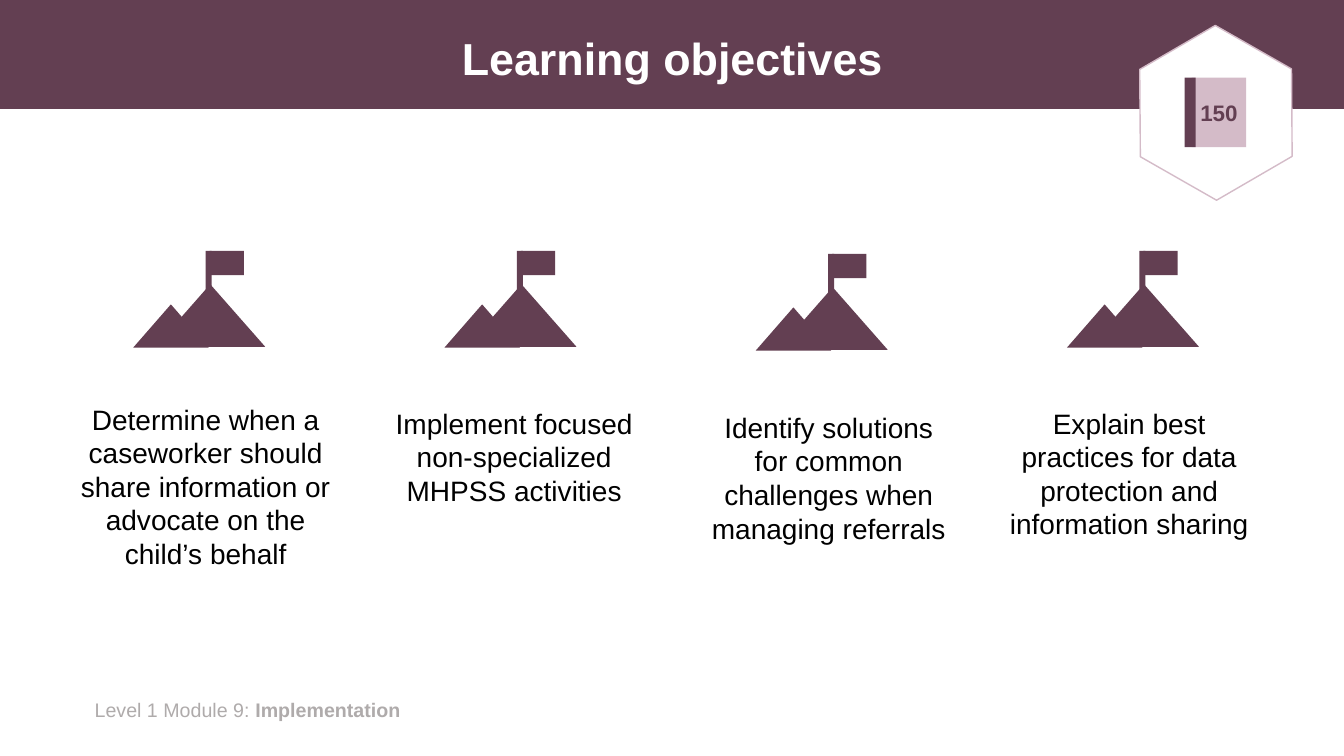
from pptx import Presentation
from pptx.dml.color import RGBColor
from pptx.enum.shapes import MSO_SHAPE
from pptx.enum.text import MSO_ANCHOR, MSO_AUTO_SIZE, PP_ALIGN
from pptx.util import Inches, Pt

PLUM = RGBColor(0x63, 0x3F, 0x52)
PINK = RGBColor(0xD4, 0xBB, 0xC8)
WHITE = RGBColor(0xFF, 0xFF, 0xFF)
BLACK = RGBColor(0, 0, 0)
GREY = RGBColor(0xAF, 0xAB, 0xAB)

# Text, then its left, top, width and height
GOALS = [
    ("Determine when a caseworker should share information or advocate "
     "on the child’s behalf", (0.58, 3.94, 2.92, 1.78)),
    ("Implement focused non-specialized MHPSS activities",
     (3.81, 3.98, 2.58, 1.11)),
    ("Identify solutions for common challenges when managing referrals",
     (6.93, 4.02, 2.58, 1.45)),
    ("Explain best practices for data protection and information sharing",
     (9.91, 3.98, 2.58, 1.45)),
]
# Icon tops and the even step between icons
TOPS = [2.49, 2.49, 2.52, 2.49]
LEFT, STEP = 1.32, 3.087

# Icon parts, measured from the icon's top left corner
PARTS = [
    (MSO_SHAPE.RECTANGLE, 0.72, 0, 0.06, 0.4),
    (MSO_SHAPE.RECTANGLE, 0.76, 0, 0.34, 0.24),
    (MSO_SHAPE.ISOSCELES_TRIANGLE, 0.22, 0.33, 1.09, 0.62),
    (MSO_SHAPE.ISOSCELES_TRIANGLE, 0, 0.53, 0.75, 0.43),
]


def add_run(para, text, size, color, bold=False):
    run = para.add_run()
    run.text = text
    font = run.font
    font.name, font.size, font.bold = "Arial", Pt(size), bold
    font.color.rgb = color


def add_form(shapes, kind, box, fill, line=None):
    form = shapes.add_shape(kind, *map(Inches, box))
    form.shadow.inherit = False
    form.fill.solid()
    form.fill.fore_color.rgb = fill
    if line is None:
        form.line.fill.background()
    else:
        form.line.color.rgb = line
        form.line.width = Pt(1)
    return form


def add_text(slide, box, runs, size, color, align):
    frame = slide.shapes.add_textbox(*map(Inches, box)).text_frame
    frame.word_wrap = True
    frame.auto_size = MSO_AUTO_SIZE.SHAPE_TO_FIT_TEXT
    para = frame.paragraphs[0]
    para.alignment = align
    for text, bold in runs:
        add_run(para, text, size, color, bold)


def add_title(slide, text):
    title = slide.shapes.title
    title.left, title.top = Inches(0.92), Inches(0.13)
    title.width, title.height = Inches(11.5), Inches(0.95)
    frame = title.text_frame
    frame.word_wrap = True
    frame.auto_size = MSO_AUTO_SIZE.NONE
    frame.vertical_anchor = MSO_ANCHOR.MIDDLE
    para = frame.paragraphs[0]
    para.alignment = PP_ALIGN.CENTER
    para.line_spacing = 0.9
    add_run(para, text, 32, WHITE, True)
    # The band lies behind the title
    band = add_form(slide.shapes, MSO_SHAPE.RECTANGLE,
                    (0, 0, 13.33, 1.08), PLUM)
    title.element.addprevious(band.element)


def add_peak(slide, left, top):
    group = slide.shapes.add_group_shape()
    for kind, x, y, wide, high in PARTS:
        add_form(group.shapes, kind, (left + x, top + y, wide, high), PLUM)


def add_badge(slide, text):
    shapes = slide.shapes.add_group_shape().shapes
    hexa = add_form(shapes, MSO_SHAPE.HEXAGON,
                    (11.19, 0.37, 1.74, 1.5), WHITE, PINK)
    hexa.adjustments[0] = 0.29
    hexa.rotation = 29.7
    page = add_form(shapes, MSO_SHAPE.RECTANGLE,
                    (11.82, 0.77, 0.54, 0.69), PINK)
    frame = page.text_frame
    frame.word_wrap = False
    frame.vertical_anchor = MSO_ANCHOR.MIDDLE
    para = frame.paragraphs[0]
    para.alignment = PP_ALIGN.CENTER
    add_run(para, text, 16, PLUM, True)
    add_form(shapes, MSO_SHAPE.RECTANGLE, (11.75, 0.77, 0.11, 0.69), PLUM)


def main():
    deck = Presentation()
    deck.slide_width, deck.slide_height = Inches(13.33), Inches(7.5)
    slide = deck.slides.add_slide(deck.slide_layouts[5])

    # Header and footer
    add_title(slide, "Learning objectives")
    add_text(slide, (0.84, 6.87, 4.55, 0.34),
             [("Level 1 Module 9: ", False), ("Implementation", True)],
             14, GREY, PP_ALIGN.LEFT)

    # Four goals, each under its icon
    for i, top in enumerate(TOPS):
        add_peak(slide, LEFT + i * STEP, top)
    for text, box in GOALS:
        add_text(slide, box, [(text, False)], 20, BLACK, PP_ALIGN.CENTER)

    # Page badge
    add_badge(slide, "150")
    deck.save("out.pptx")


if __name__ == "__main__":
    main()
